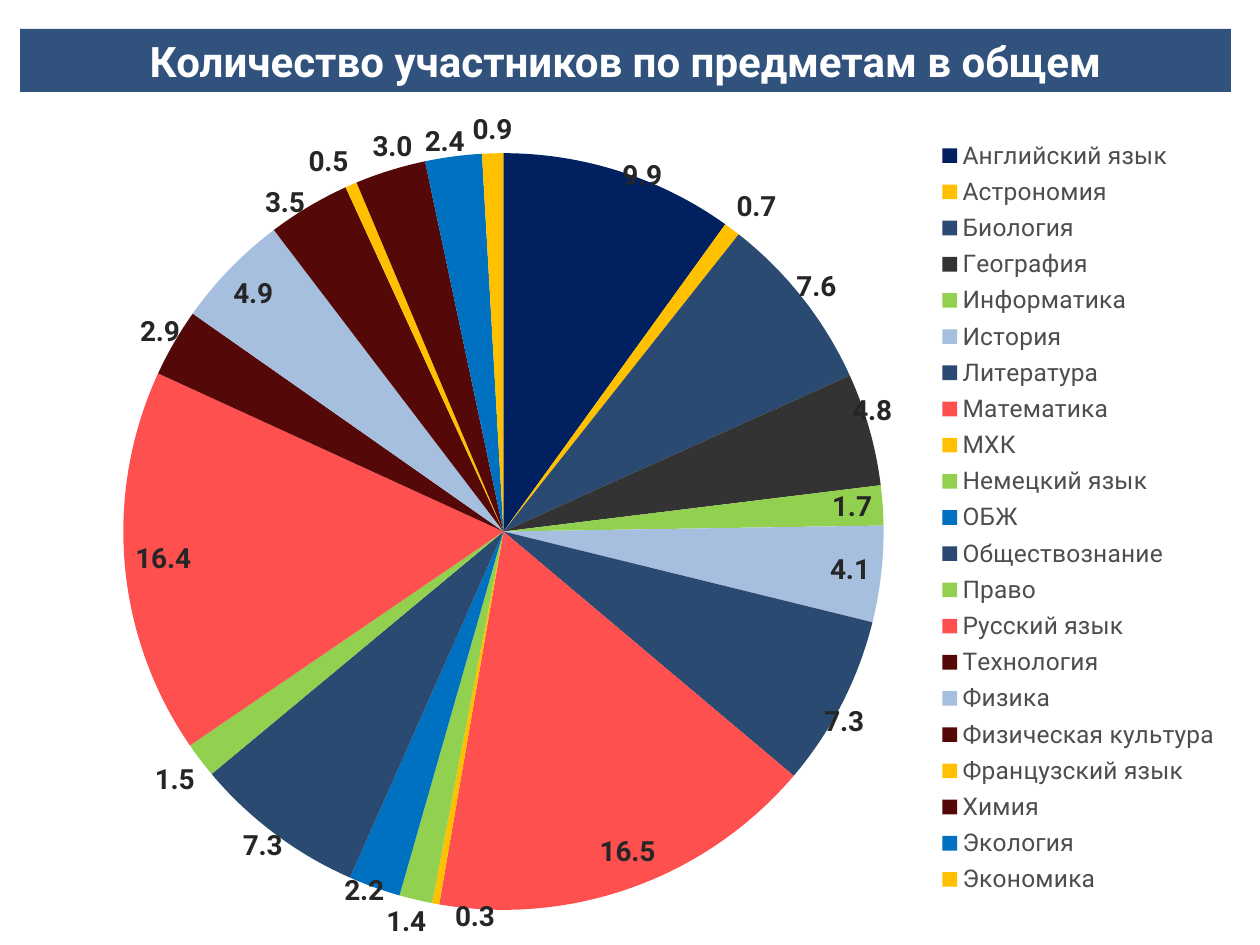
from lxml import etree
from pptx import Presentation, util as u
from pptx.chart.data import CategoryChartData
from pptx.dml.color import RGBColor
from pptx.enum import chart as ch, text
from pptx.oxml import ns

# Content: subject, share, slice colour, label shift (shares of the chart) or None for best fit
TITLE = "Количество участников по предметам в общем"
SUBJECTS = [
    ("Английский язык", 9.9, "navy", (0, 0.03)),
    ("Астрономия", 0.7, "gold", None),
    ("Биология", 7.6, "blue", (-0.01, 0.01)),
    ("География", 4.8, "dark", (-0.02, 0)),
    ("Информатика", 1.7, "green", None),
    ("История", 4.1, "pale", None),
    ("Литература", 7.3, "blue", (-0.02, 0)),
    ("Математика", 16.5, "red", None),
    ("МХК", 0.3, "gold", (0.05, -0.01)),
    ("Немецкий язык", 1.4, "green", (0.01, 0)),
    ("ОБЖ", 2.2, "sky", (0.01, -0.02)),
    ("Обществознание", 7.3, "blue", (0.01, -0.01)),
    ("Право", 1.5, "green", None),
    ("Русский язык", 16.4, "red", None),
    ("Технология", 2.9, "wine", (0.01, 0.01)),
    ("Физика", 4.9, "pale", None),
    ("Физическая культура", 3.5, "wine", (0, 0.02)),
    ("Французский язык", 0.5, "gold", None),
    ("Химия", 3.0, "wine", (0.02, 0)),
    ("Экология", 2.4, "sky", (0.01, 0.01)),
    ("Экономика", 0.9, "gold", None),
]

THEME = {
    "font": "Roboto", "format": "0.0",
    "size": {"title": 24, "label": 16, "legend": 14, "chart": 10},
    "color": {
        "banner": "30527D", "white": "FFFFFF", "text": "4D4D4D", "label": "262626",
        "navy": "002060", "gold": "FFC000", "blue": "2B4A71", "dark": "333333",
        "green": "92D050", "pale": "A7BFDE", "red": "FF5050", "sky": "0070C0",
        "wine": "540808",
    },
}

# Layout in inches, then in shares of the chart
BANNER = (0.16, 0.23, 9.61, 0.5)
CHART = (0.2, 0.03, 9.61, 7.45)
PLOT = (0.08, 0.16, 0.63, 0.81)
LEGEND = (0.75, 0.14, 0.24, 0.82)


def color(name):
    return RGBColor.from_string(THEME["color"][name])


def set_font(font, role, shade, bold=False):
    font.name, font.size, font.bold = THEME["font"], u.Pt(THEME["size"][role]), bold
    font.color.rgb = color(shade)


def element(tag, **attrs):
    el = etree.Element(ns.qn("c:" + tag))
    for name, value in attrs.items():
        el.set(name, str(value))
    return el


def manual_layout(x, y, w=None, h=None, inner=False):
    layout = element("layout")
    manual = etree.SubElement(layout, ns.qn("c:manualLayout"))
    if inner:
        manual.append(element("layoutTarget", val="inner"))
    if w is not None:
        manual.append(element("xMode", val="edge"))
        manual.append(element("yMode", val="edge"))
    for tag, value in zip("xywh", (x, y, w, h)):
        if value is not None:
            manual.append(element(tag, val=value))
    return layout


def drop_layout(parent):
    for old in parent.findall(ns.qn("c:layout")):
        parent.remove(old)


def add_title(s, content, box):
    sp = s.shapes.title
    sp.left, sp.top, sp.width, sp.height = map(u.Inches, box)
    sp.fill.solid()
    sp.fill.fore_color.rgb = color("banner")
    tf = sp.text_frame
    tf.word_wrap, tf.auto_size = True, text.MSO_AUTO_SIZE.NONE
    tf.vertical_anchor = text.MSO_ANCHOR.MIDDLE
    p = tf.paragraphs[0]
    p.alignment = text.PP_ALIGN.CENTER
    r = p.add_run()
    r.text = content
    set_font(r.font, "title", "white", bold=True)


def format_labels(series):
    labels = series.data_labels
    labels.show_value = True
    labels.number_format, labels.number_format_is_linked = THEME["format"], False
    labels.position = ch.XL_LABEL_POSITION.BEST_FIT
    set_font(labels.font, "label", "label", bold=True)


def shift_label(series, i, shift):
    label = series.points[i].data_label
    label.position = ch.XL_LABEL_POSITION.OUTSIDE_END
    set_font(label.font, "label", "label", bold=True)
    node = next(d for d in series.data_labels._element.findall(ns.qn("c:dLbl"))
                if d.find(ns.qn("c:idx")).get("val") == str(i))
    drop_layout(node)
    node.insert(1, manual_layout(*shift))
    node.insert(2, element("numFmt", formatCode=THEME["format"], sourceLinked=0))


def add_pie(s):
    data = CategoryChartData(number_format=THEME["format"])
    data.categories = [row[0] for row in SUBJECTS]
    data.add_series("Series 1", [row[1] for row in SUBJECTS])
    chart = s.shapes.add_chart(ch.XL_CHART_TYPE.PIE, *map(u.Inches, CHART), data).chart
    set_font(chart.font, "chart", "text")
    chart.has_title = False

    # Slices and labels
    series = chart.plots[0].series[0]
    format_labels(series)
    for i, (_, _, shade, shift) in enumerate(SUBJECTS):
        fill = series.points[i].format.fill
        fill.solid()
        fill.fore_color.rgb = color(shade)
        if shift:
            shift_label(series, i, shift)

    # Plot area and legend
    area = chart._chartSpace.chart.plotArea
    drop_layout(area)
    area.insert(0, manual_layout(*PLOT, inner=True))
    chart.has_legend = True
    legend = chart.legend
    legend.position = ch.XL_LEGEND_POSITION.RIGHT
    legend.include_in_layout = False
    set_font(legend.font, "legend", "text")
    drop_layout(legend._element)
    legend._element.find(ns.qn("c:legendPos")).addnext(manual_layout(*LEGEND))


def main():
    prs = Presentation()
    prs.slide_width, prs.slide_height = u.Inches(10), u.Inches(7.5)
    s = prs.slides.add_slide(prs.slide_layouts[5])
    add_title(s, TITLE, BANNER)
    add_pie(s)
    prs.save("out.pptx")


if __name__ == "__main__":
    main()
